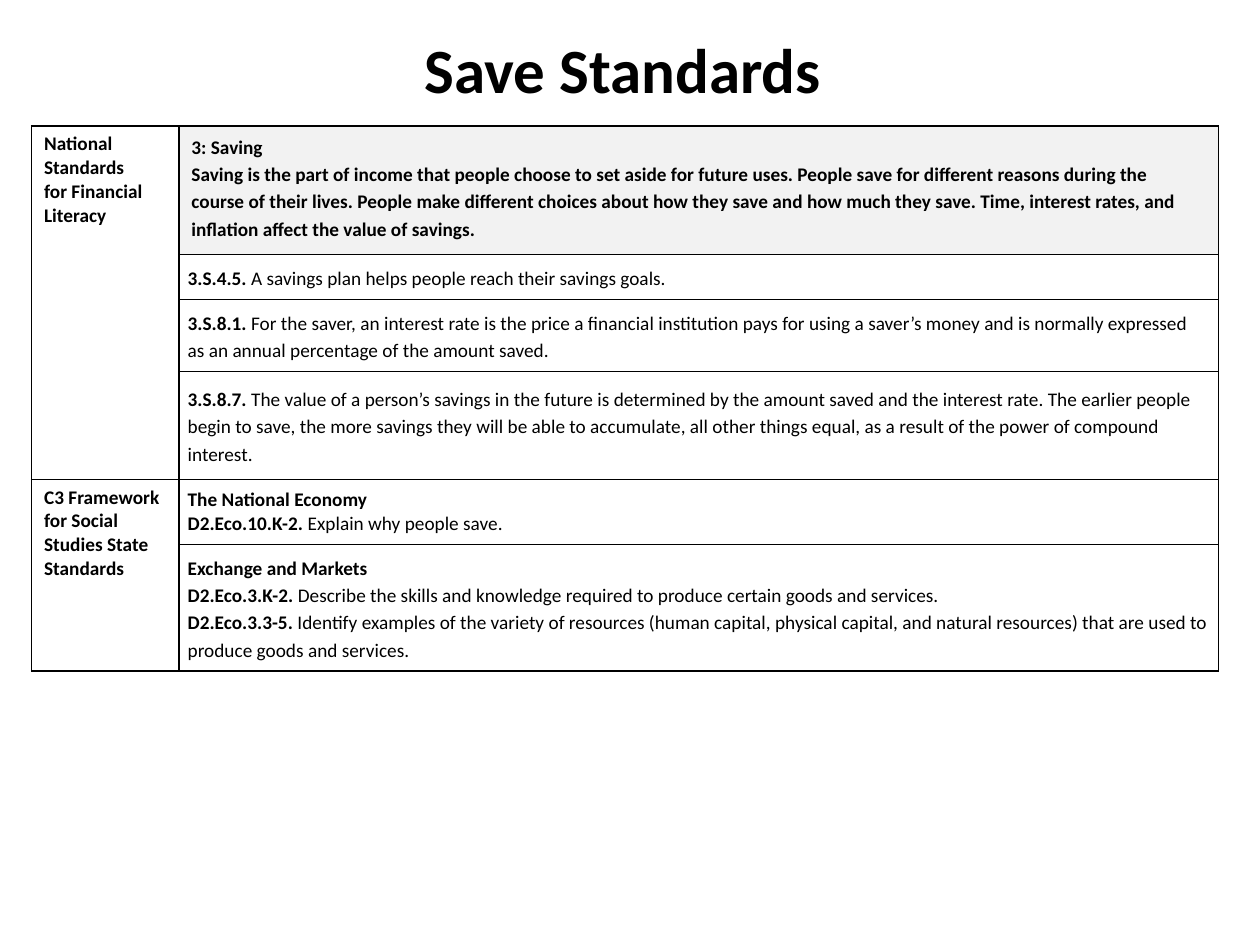
from lxml.etree import SubElement
from pptx import Presentation
from pptx.dml.color import RGBColor
from pptx.enum.text import MSO_ANCHOR, PP_ALIGN
from pptx.oxml.ns import qn
from pptx.util import Inches, Pt

COLORS = {"ink": "000000", "paper": "FFFFFF", "heading": "F2F2F2"}

COLUMN_WIDTHS = [1.17, 8.25]
ROW_HEIGHTS = [1.02, 0.28, 0.28, 0.76, 0.51, 0.81]

# Each paragraph is a pair: bold lead, regular remainder.
# Each group: name paragraphs, then the standards beside them.
GROUPS = [
    (
        [("National Standards", ""), ("for Financial Literacy", "")],
        [
            {"paragraphs": [
                ("3: Saving", ""),
                ("Saving is the part of income that people choose to set aside for "
                 "future uses. People save for different reasons during the course of "
                 "their lives. People make different choices about how they save and "
                 "how much they save. Time, interest rates, and inflation affect the "
                 "value of savings.", "")],
             "fill": "heading", "inset": None},
            {"paragraphs": [
                ("3.S.4.5.", " A savings plan helps people reach their savings goals.")],
             "anchor": MSO_ANCHOR.MIDDLE},
            {"paragraphs": [
                ("3.S.8.1. ", "For the saver, an interest rate is the price a financial "
                 "institution pays for using a saver’s money and is normally expressed "
                 "as an annual percentage of the amount saved.")],
             "anchor": MSO_ANCHOR.MIDDLE},
            {"paragraphs": [
                ("3.S.8.7. ", "The value of a person’s savings in the future is "
                 "determined by the amount saved and the interest rate. The earlier "
                 "people begin to save, the more savings they will be able to "
                 "accumulate, all other things equal, as a result of the power of "
                 "compound interest.")],
             "anchor": MSO_ANCHOR.MIDDLE},
        ],
    ),
    (
        [("C3 Framework for Social Studies State Standards", "")],
        [
            {"paragraphs": [
                ("The National Economy", ""),
                ("D2.Eco.10.K-2. ", "Explain why people save.")],
             "spacing": None},
            {"paragraphs": [
                ("Exchange and Markets", ""),
                ("D2.Eco.3.K-2.", " Describe the skills and knowledge required to "
                 "produce certain goods and services."),
                ("D2.Eco.3.3-5.", " Identify examples of the variety of resources "
                 "(human capital, physical capital, and natural resources) that are "
                 "used to produce goods and services.")]},
        ],
    ),
]


class StandardsSlide:
    font_name = "Calibri"
    title_size = 36
    body_size = 11
    border_width = 1

    def __init__(self, presentation):
        self.slide = presentation.slides.add_slide(presentation.slide_layouts[5])

    def add_run(self, paragraph, text, size, bold):
        run = paragraph.add_run()
        run.text = text
        style = {"name": self.font_name, "size": Pt(size), "bold": bold}
        for attribute, value in style.items():
            setattr(run.font, attribute, value)
        run.font.color.rgb = RGBColor.from_string(COLORS["ink"])

    def title(self, text, left, top, width, height):
        heading = self.slide.shapes.title
        place = {"left": left, "top": top, "width": width, "height": height}
        for attribute, value in place.items():
            setattr(heading, attribute, Inches(value))
        heading.text_frame.vertical_anchor = MSO_ANCHOR.MIDDLE
        paragraph = heading.text_frame.paragraphs[0]
        paragraph.alignment = PP_ALIGN.CENTER
        self.add_run(paragraph, text, self.title_size, True)

    def table(self, left, top, width, height):
        frame = self.slide.shapes.add_table(
            len(ROW_HEIGHTS), len(COLUMN_WIDTHS),
            Inches(left), Inches(top), Inches(width), Inches(height))
        grid = frame.table
        for column, column_width in zip(grid.columns, COLUMN_WIDTHS):
            column.width = Inches(column_width)
        for row, row_height in zip(grid.rows, ROW_HEIGHTS):
            row.height = Inches(row_height)
        frame.height = Inches(height)
        for cell in grid.iter_cells():
            self.border(cell)
            self.fill(cell, "paper")
        return grid

    def border(self, cell):
        properties = cell._tc.get_or_add_tcPr()
        for side in ("a:lnL", "a:lnR", "a:lnT", "a:lnB"):
            line = SubElement(properties, qn(side), w=str(Pt(self.border_width)))
            solid = SubElement(line, qn("a:solidFill"))
            SubElement(solid, qn("a:srgbClr"), val=COLORS["ink"])

    def fill(self, cell, color):
        cell.fill.solid()
        cell.fill.fore_color.rgb = RGBColor.from_string(COLORS[color])

    def cell(self, cell, paragraphs, fill="paper", inset=0.07, spacing=1.15,
             anchor=MSO_ANCHOR.TOP):
        self.fill(cell, fill)
        cell.vertical_anchor = anchor
        if inset is not None:
            for side in ("left", "right", "top", "bottom"):
                setattr(cell, f"margin_{side}", Inches(inset))
        for index, (lead, remainder) in enumerate(paragraphs):
            frame = cell.text_frame
            paragraph = frame.add_paragraph() if index else frame.paragraphs[0]
            paragraph.line_spacing = spacing
            self.add_run(paragraph, lead, self.body_size, True)
            if remainder:
                self.add_run(paragraph, remainder, self.body_size, False)


def main():
    presentation = Presentation()
    presentation.slide_width = Inches(10)
    presentation.slide_height = Inches(7.5)

    page = StandardsSlide(presentation)
    page.title("Save Standards ", 0, -0.08, 10, 1.25)
    grid = page.table(0.25, 1, sum(COLUMN_WIDTHS), 4.19)

    first_row = 0
    for group_name, standards in GROUPS:
        last_row = first_row + len(standards) - 1
        name_cell = grid.cell(first_row, 0)
        name_cell.merge(grid.cell(last_row, 0))
        page.cell(name_cell, group_name, inset=None, spacing=None)
        for row, standard in enumerate(standards, first_row):
            page.cell(grid.cell(row, 1), **standard)
        first_row = last_row + 1

    presentation.save("out.pptx")


if __name__ == "__main__":
    main()
